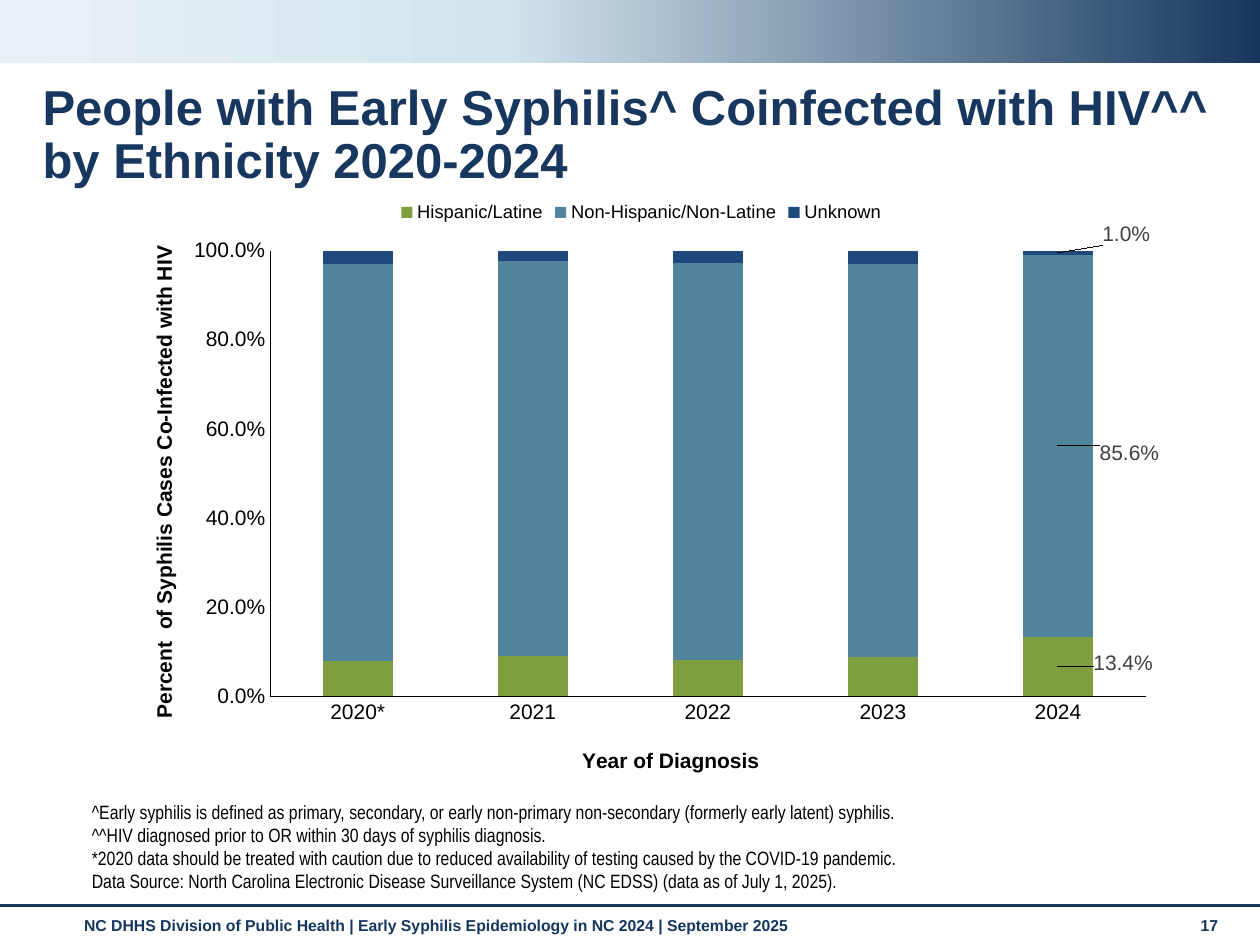
from pptx import Presentation
from pptx.chart.data import CategoryChartData as ChartData
from pptx.dml.color import RGBColor
from pptx.enum.chart import (XL_CHART_TYPE as Kind, XL_LABEL_POSITION as Spot,
                             XL_LEGEND_POSITION as Side, XL_TICK_MARK as Tick)
from pptx.enum.shapes import MSO_CONNECTOR as Link, MSO_SHAPE as Form
from pptx.enum.text import MSO_ANCHOR as Anchor
from pptx.oxml import parse_xml
from pptx.oxml.ns import nsdecls, qn
from pptx.util import Pt

NAVY, BLACK, GREY = "17375E", "000000", "404040"
FOOT = "15365E"


def tint(code):
    return RGBColor.from_string(code)


def apply(item, **vals):
    for key, val in vals.items():
        setattr(item, key, val)


def lay(node, spot, **frac):
    """Give a chart part a manual layout, as shares of the chart area."""
    old = node.find(qn("c:layout"))
    if old is not None:
        node.remove(old)
    body = "".join(f'<c:{key} val="{val}"/>' for key, val in frac.items())
    inner = '<c:layoutTarget val="inner"/>' if "w" in frac else ""
    modes = "" if node.tag == qn("c:dLbl") else \
        '<c:xMode val="edge"/><c:yMode val="edge"/>'
    node.insert(spot, parse_xml(
        f'<c:layout {nsdecls("c")}><c:manualLayout>{inner}{modes}{body}'
        '</c:manualLayout></c:layout>'))


class Deck:
    face = "Arial"

    def __init__(self, wide, high):
        self.prs = Presentation()
        apply(self.prs, slide_width=Pt(wide), slide_height=Pt(high))
        self.slide = self.prs.slides.add_slide(self.prs.slide_layouts[6])

    def font(self, font, size, code=BLACK, bold=False, face=None):
        apply(font, size=Pt(size), bold=bold, name=face or self.face)
        font.color.rgb = tint(code)

    def text(self, box, lines, size, code, bold=False, face=None,
             anchor=Anchor.TOP, gap=1.0):
        frame = self.slide.shapes.add_textbox(*map(Pt, box)).text_frame
        apply(frame, word_wrap=True, vertical_anchor=anchor)
        for i, line in enumerate(lines):
            para = frame.add_paragraph() if i else frame.paragraphs[0]
            para.line_spacing = gap
            run = para.add_run()
            run.text = line
            self.font(run.font, size, code, bold, face)

    def band(self, box, stops):
        bar = self.slide.shapes.add_shape(Form.RECTANGLE, *map(Pt, box))
        bar.shadow.inherit = False
        bar.line.fill.background()
        bar.fill.gradient()
        bar.fill.gradient_angle = 180
        marks = "".join(f'<a:gs pos="{pos * 1000}"><a:srgbClr val="{code}"/></a:gs>'
                        for pos, code in stops)
        old = bar.fill._xPr.find(qn("a:gradFill")).find(qn("a:gsLst"))
        old.getparent().replace(
            old, parse_xml(f'<a:gsLst {nsdecls("a")}>{marks}</a:gsLst>'))

    def rule(self, ends, code, width):
        line = self.slide.shapes.add_connector(Link.STRAIGHT, *map(Pt, ends))
        line.line.width = Pt(width)
        line.line.color.rgb = tint(code)
        line._element.spPr.append(parse_xml(f'<a:effectLst {nsdecls("a")}/>'))

    def axis(self, axis, title, turn, x, y):
        apply(axis, major_tick_mark=Tick.NONE, minor_tick_mark=Tick.NONE,
              has_major_gridlines=False, has_title=True)
        self.font(axis.tick_labels.font, 12)
        axis.format.line.width = Pt(0.75)
        axis.format.line.color.rgb = tint(BLACK)
        frame = axis.axis_title.text_frame
        frame.text = title
        self.font(frame.paragraphs[0].runs[0].font, 12, bold=True)
        frame._txBody.bodyPr.set("rot", str(turn * 60000))
        lay(axis.axis_title._element, 1, x=x, y=y)

    def label(self, series, point, x, y):
        """Show one value, moved by a share of the chart area."""
        tag = series.points[point].data_label
        self.font(tag.font, 12, GREY)
        tag.position = Spot.CENTER
        series.data_labels.show_value = False
        for node in series._element.iter(qn("c:dLbl")):
            lay(node, 1, x=x, y=y)

    def chart(self, box, cats, rows):
        data = ChartData(number_format="0.0%")
        data.categories = cats
        for name, vals, *_ in rows:
            data.add_series(name, vals)
        chart = self.slide.shapes.add_chart(
            Kind.COLUMN_STACKED, *map(Pt, box), data).chart
        self.font(chart.font, 10)
        apply(chart, has_title=False, has_legend=True)
        apply(chart.legend, position=Side.TOP, include_in_layout=False)
        self.font(chart.legend.font, 10.5)
        # Bars and their last-year labels
        plot = chart.plots[0]
        apply(plot, gap_width=150, overlap=100, vary_by_categories=False)
        for series, (_, _, code, shift) in zip(plot.series, rows):
            series.format.fill.solid()
            series.format.fill.fore_color.rgb = tint(code)
            self.label(series, len(cats) - 1, *shift)
        # Axes
        self.axis(chart.category_axis, "Year of Diagnosis", 0, 0.44, 0.92)
        self.axis(chart.value_axis,
                  "Percent  of Syphilis Cases Co-Infected with HIV",
                  -90, 0.03, 0.09)
        apply(chart.value_axis, minimum_scale=0, maximum_scale=1, major_unit=0.2)
        apply(chart.value_axis.tick_labels,
              number_format="0.0%", number_format_is_linked=False)
        area = chart._chartSpace.find(".//" + qn("c:plotArea"))
        lay(area, 0, x=0.147, y=0.104, w=0.833, h=0.737)


def main():
    deck = Deck(720, 540)

    # Top band and footer
    deck.band((0, 0, 720, 36), [(0, NAVY), (60, "D3E4ED"), (100, "E9F1F6")])
    deck.rule((0, 517.7, 720, 517.7), NAVY, 1.75)
    deck.text((41, 519.8, 629, 21), [
        "NC DHHS Division of Public Health | Early Syphilis Epidemiology "
        "in NC 2024 | September 2025"], 9, FOOT, bold=True)
    deck.text((679, 519.8, 32, 21), ["17"], 9, FOOT, bold=True)

    # Title
    deck.text((17.3, 43.9, 698.4, 43.2), [
        "People with Early Syphilis^ Coinfected with HIV^^ by Ethnicity 2020-2024"],
        28, NAVY, bold=True, gap=0.9)

    # Chart: name, values, colour, label shift
    deck.chart((66.2, 107.3, 600.5, 345.6),
               ["2020*", "2021", "2022", "2023", "2024"], [
        ("Hispanic/Latine", (0.08, 0.091, 0.082, 0.089, 0.134),
         "7F9E3F", (0.062, -0.006)),
        ("Non-Hispanic/Non-Latine", (0.891, 0.886, 0.891, 0.88, 0.856),
         "52849C", (0.068, 0.012)),
        ("Unknown", (0.028, 0.022, 0.027, 0.031, 0.01),
         "1F497D", (0.065, -0.031))])

    # Footnotes
    deck.text((45.4, 468, 629, 45.4), [
        "^Early syphilis is defined as primary, secondary, or early non-primary "
        "non-secondary (formerly early latent) syphilis.",
        "^^HIV diagnosed prior to OR within 30 days of syphilis diagnosis.",
        "*2020 data should be treated with caution due to reduced availability "
        "of testing caused by the COVID-19 pandemic.",
        "Data Source: North Carolina Electronic Disease Surveillance System "
        "(NC EDSS) (data as of July 1, 2025)."],
        11, BLACK, face="Arial Narrow", anchor=Anchor.BOTTOM)

    deck.prs.save("out.pptx")


if __name__ == "__main__":
    main()
